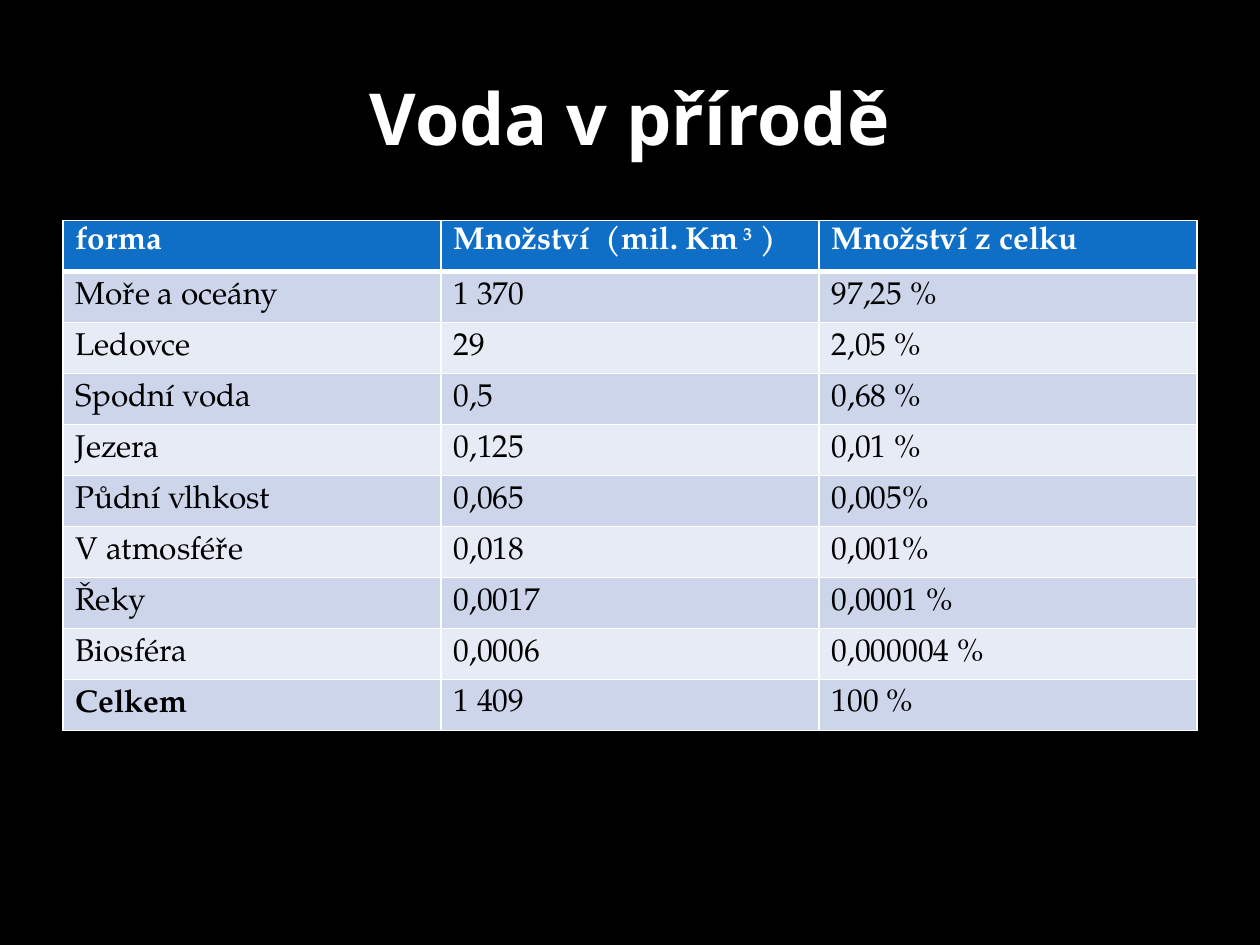
from lxml import etree
from pptx import Presentation
from pptx.dml.color import RGBColor
from pptx.enum.text import MSO_ANCHOR, PP_ALIGN
from pptx.oxml.ns import qn
from pptx.util import Inches, Pt

CENTER = PP_ALIGN.CENTER
TOP, MIDDLE = MSO_ANCHOR.TOP, MSO_ANCHOR.MIDDLE
WIDTH, HEIGHT = Inches(10), Inches(7.5)

BLACK, WHITE = "000000", "FFFFFF"
HEADER_FILL = "0F6FC6"
BANDS = ["E7EBF5", "CCD5EA"]

TITLE_FORMAT = {"size": Pt(41), "name": "Noto Sans", "bold": True}
CELL_FORMAT = {"size": Pt(18), "name": "TeX Gyre Pagella", "bold": False}
BOLD_FORMAT = {**CELL_FORMAT, "bold": True}

HEADER = [[("forma", 0)],
          [("Množství  (mil. Km", 0), (" 3", 30000), (" )", 0)],
          [("Množství z celku", 0)]]
WATER_FORMS = [
    ("Moře a oceány", "1 370", "97,25 %"),
    ("Ledovce", "29", "2,05 %"),
    ("Spodní voda", "0,5", "0,68 %"),
    ("Jezera", "0,125", "0,01 %"),
    ("Půdní vlhkost", "0,065", "0,005%"),
    ("V atmosféře", "0,018", "0,001%"),
    ("Řeky", "0,0017", "0,0001 %"),
    ("Biosféra", "0,0006", "0,000004 %"),
    ("Celkem", "1 409", "100 %"),
]


def rgb(value):
    return RGBColor.from_string(value)


def share(x, y, w, h):
    return [int(v) for v in (x * WIDTH, y * HEIGHT, w * WIDTH, h * HEIGHT)]


def add_run(p, text, fmt, color, baseline=0):
    r = p.add_run()
    r.text = text
    for name, value in fmt.items():
        setattr(r.font, name, value)
    r.font.color.rgb = rgb(color)
    if baseline:
        r._r.get_or_add_rPr().set("baseline", str(baseline))


def set_borders(cell, widths):
    tc_pr = cell._tc.get_or_add_tcPr()
    for side, width in widths.items():
        ln = etree.SubElement(tc_pr, qn(f"a:ln{side}"), w=str(Pt(width)))
        fill = etree.SubElement(ln, qn("a:solidFill"))
        etree.SubElement(fill, qn("a:srgbClr"), val=WHITE)


def add_title(slide, box, text):
    tf = slide.shapes.add_textbox(*box).text_frame
    tf.word_wrap = True
    tf.vertical_anchor = MIDDLE
    p = tf.paragraphs[0]
    p.alignment = CENTER
    add_run(p, text, TITLE_FORMAT, WHITE)


def add_water_table(slide, box):
    rows = [HEADER] + [[[(text, 0)] for text in row] for row in WATER_FORMS]
    table = slide.shapes.add_table(len(rows), len(HEADER), *box).table
    for i, row in enumerate(rows):
        is_header = i == 0
        fill = HEADER_FILL if is_header else BANDS[i % 2]
        color = WHITE if is_header else BLACK
        borders = {"L": 1, "R": 1, "T": 3 if i == 1 else 1, "B": 3 if is_header else 1}
        for j, runs in enumerate(row):
            cell = table.cell(i, j)
            set_borders(cell, borders)
            cell.fill.solid()
            cell.fill.fore_color.rgb = rgb(fill)
            cell.vertical_anchor = TOP if is_header else MIDDLE
            is_total_label = i == len(rows) - 1 and j == 0
            fmt = BOLD_FORMAT if is_header or is_total_label else CELL_FORMAT
            for text, baseline in runs:
                add_run(cell.text_frame.paragraphs[0], text, fmt, color, baseline)


def main():
    prs = Presentation()
    prs.slide_width, prs.slide_height = WIDTH, HEIGHT
    slide = prs.slides.add_slide(prs.slide_layouts[6])
    slide.background.fill.solid()
    slide.background.fill.fore_color.rgb = rgb(BLACK)
    add_title(slide, share(0.05, 0.04, 0.9, 1 / 6), "Voda v přírodě")
    add_water_table(slide, share(0.05, 7 / 30, 0.9, 0.54))
    prs.save("out.pptx")


if __name__ == "__main__":
    main()
